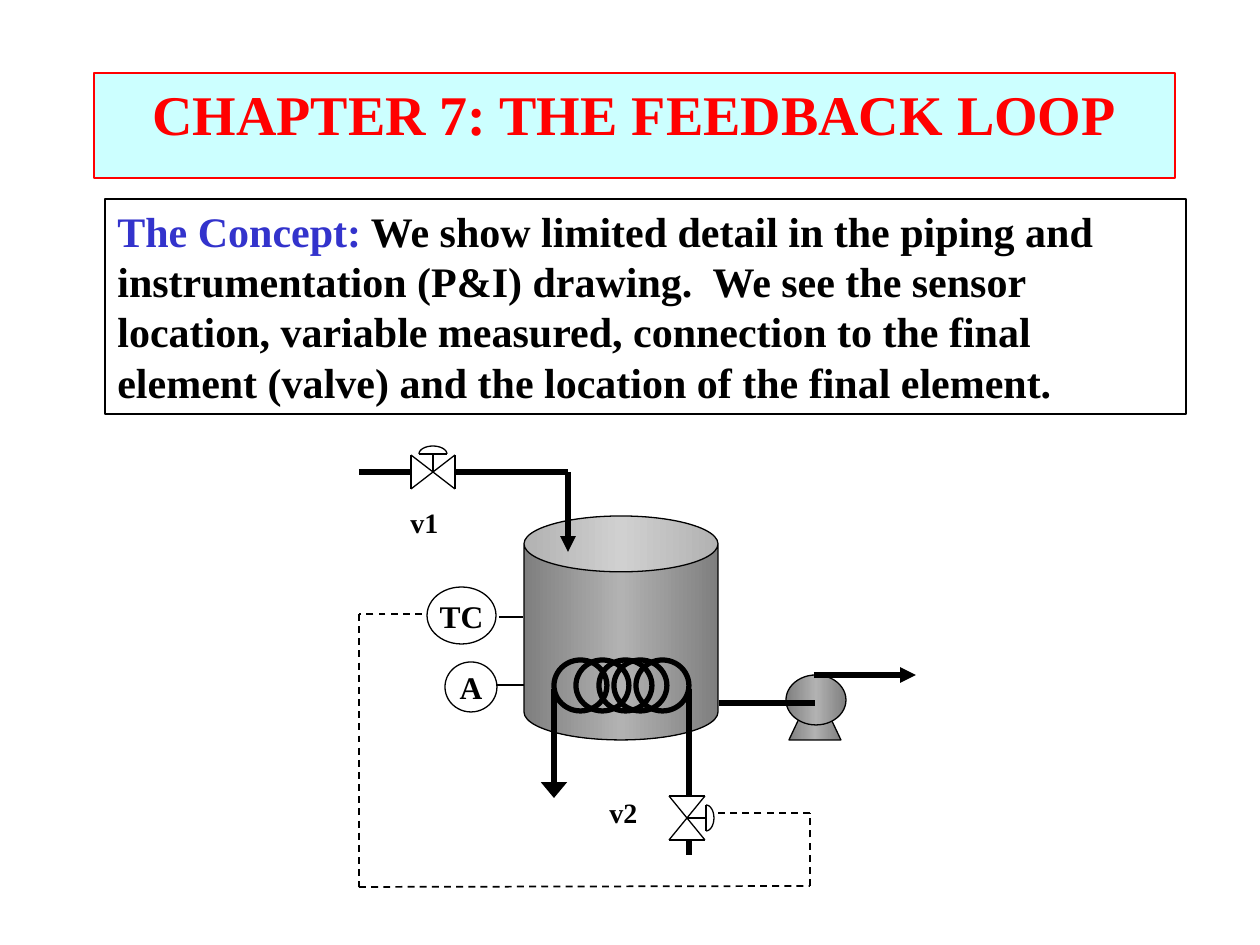
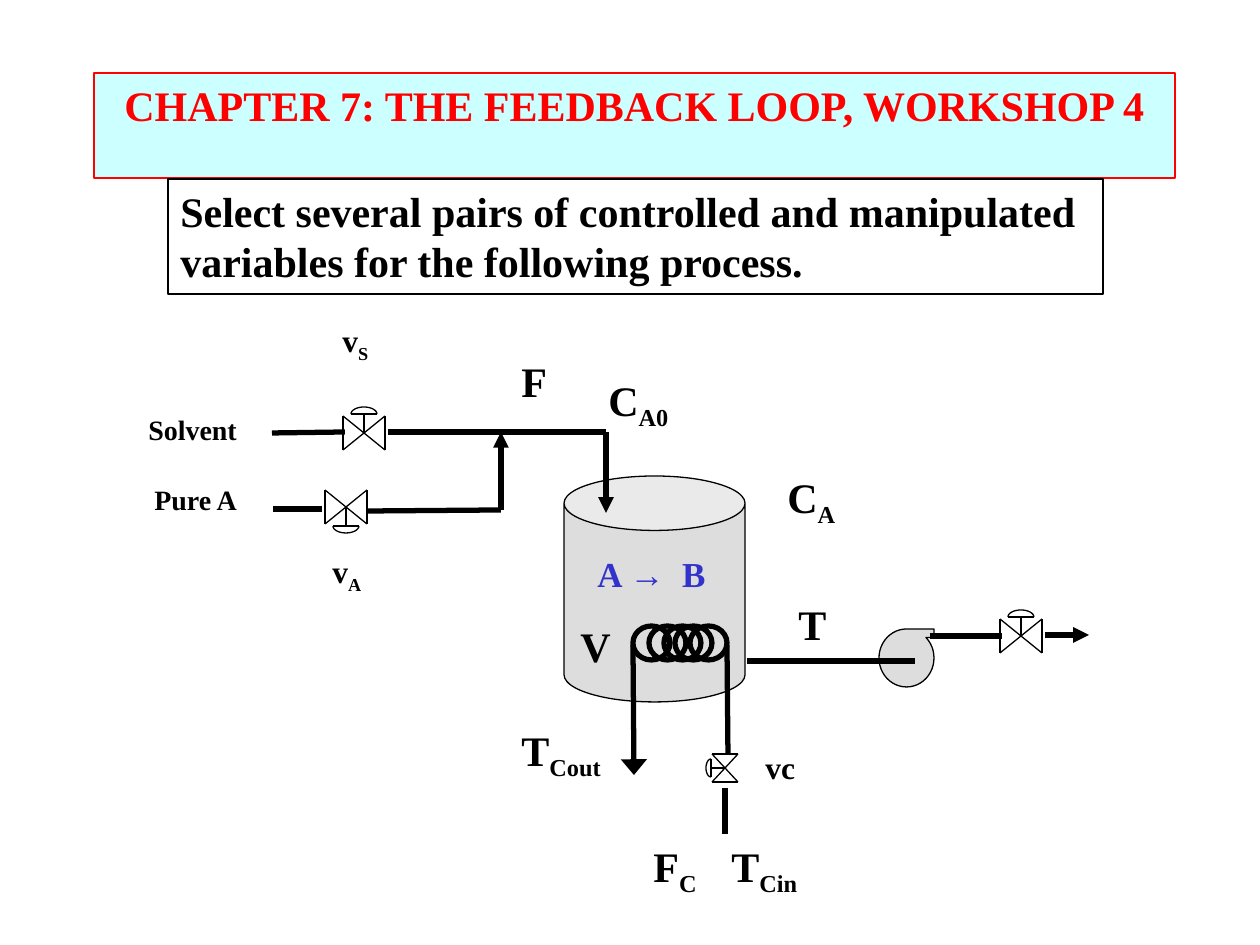
from copy import deepcopy
from dataclasses import dataclass
from itertools import pairwise
from math import cos, pi, sin

from lxml import etree
from pptx import Presentation
from pptx.dml.color import RGBColor
from pptx.enum.dml import MSO_LINE
from pptx.enum.shapes import MSO_CONNECTOR, MSO_SHAPE
from pptx.enum.text import MSO_ANCHOR, MSO_AUTO_SIZE, PP_ALIGN
from pptx.oxml.ns import qn
from pptx.util import Emu, Pt

EMU_PER_PX = 914400 / 126
FONT = "Times New Roman"
TITLE_ONLY = 5
COLOURS = {
    "black": "000000",
    "title": "FF0000",
    "band": "CCFFFF",
    "accent": "3333CC",
    "steel_dark": "7F7F7F",
    "steel_light": "B2B2B2",
    "vessel": "DDDDDD",
}
THIN, SIGNAL, PIPE = 0.75, 1, 3
STRAIGHT = MSO_CONNECTOR.STRAIGHT
DASH = MSO_LINE.DASH
RECT, OVAL, CAN = MSO_SHAPE.RECTANGLE, MSO_SHAPE.OVAL, MSO_SHAPE.CAN
COIL_RING = MSO_SHAPE.FLOWCHART_CONNECTOR
PUMP_BASE = MSO_SHAPE.FLOWCHART_MANUAL_OPERATION
PUMP_CASING = MSO_SHAPE.FLOWCHART_SEQUENTIAL_ACCESS_STORAGE
LEFT, CENTER = PP_ALIGN.LEFT, PP_ALIGN.CENTER
TOP, MIDDLE = MSO_ANCHOR.TOP, MSO_ANCHOR.MIDDLE
FIT_SHAPE = MSO_AUTO_SIZE.SHAPE_TO_FIT_TEXT
UP, DOWN, TO_LEFT, TO_RIGHT = (0, -1), (0, 1), (-1, 0), (1, 0)

Point = tuple[float, float]
Box = tuple[int, int, int, int]


@dataclass
class Pipe:
    points: list[Point]
    arrow: str = ""
    width: float = PIPE
    dashed: bool = False


@dataclass
class Valve:
    x: int
    y: int
    actuator: Point
    run: int = 21
    bore: int = 17
    stem: int = 19
    cap: int = 13
    dome: int = 7


@dataclass
class Coil:
    lefts: list[int]
    top: int
    width: int
    height: int


@dataclass
class Label:
    text: str
    box: Box
    size: int = 24
    colour: str = "black"
    wrap: bool = False


def px(length: float) -> Emu:
    return Emu(round(length * EMU_PER_PX))


def rgb(colour: str) -> RGBColor:
    return RGBColor.from_string(COLOURS[colour])


def set_line(item, width: float = THIN, colour: str = "black") -> None:
    item.line.color.rgb = rgb(colour)
    item.line.width = Pt(width)


def set_fill(shape, colour: str) -> None:
    if not colour:
        shape.fill.background()
    elif colour == "steel":
        shape.fill.gradient()
        shape.fill.gradient_angle = 0
        stop_list = shape._element.spPr.find(qn("a:gradFill")).find(qn("a:gsLst"))
        stop_list.insert(1, deepcopy(stop_list[0]))
        shades = [(0, "steel_dark"), (0.5, "steel_light"), (1, "steel_dark")]
        for stop, (position, shade) in zip(shape.fill.gradient_stops, shades):
            stop.position = position
            stop.color.rgb = rgb(shade)
    else:
        shape.fill.solid()
        shape.fill.fore_color.rgb = rgb(colour)


def draw_shape(slide, kind, box: Box, fill: str = "", width: float = THIN, flip: bool = False):
    shape = slide.shapes.add_shape(kind, *map(px, box))
    shape.shadow.inherit = False
    set_fill(shape, fill)
    set_line(shape, width)
    if flip:
        shape._element.spPr.get_or_add_xfrm().set("flipV", "1")
    return shape


def draw_segment(shapes, start: Point, end: Point, width: float = THIN,
                 dashed: bool = False, arrow: str = "") -> None:
    segment = shapes.add_connector(STRAIGHT, *map(px, (*start, *end)))
    set_line(segment, width)
    if dashed:
        segment.line.dash_style = DASH
    properties = segment._element.spPr
    if arrow:
        etree.SubElement(properties.find(qn("a:ln")), qn("a:tailEnd"),
                         type="triangle", w=arrow, len="med")
    etree.SubElement(properties, qn("a:effectLst"))


def draw_pipe(slide, pipe: Pipe) -> None:
    for start, end in pairwise(pipe.points):
        arrow = pipe.arrow if end == pipe.points[-1] else ""
        draw_segment(slide.shapes, start, end, pipe.width, pipe.dashed, arrow)


def draw_valve(slide, valve: Valve) -> None:
    dx, dy = valve.actuator
    shapes = slide.shapes.add_group_shape().shapes

    def place(along: float, out: float) -> Point:
        return valve.x + along * abs(dy) + out * dx, valve.y + along * abs(dx) + out * dy

    run, bore, stem, cap = valve.run, valve.bore, valve.stem, valve.cap
    corners = [(-run, -bore), (-run, bore), (run, -bore), (run, bore), (-run, -bore)]
    strokes = [*pairwise(corners), ((0, 0), (0, stem)), ((-cap, stem), (cap, stem))]
    for start, end in strokes:
        draw_segment(shapes, place(*start), place(*end))

    angles = [pi * step / 16 for step in range(17)]
    arc = [tuple(map(px, place(cap * cos(a), stem + valve.dome * sin(a)))) for a in angles]
    builder = shapes.build_freeform(*arc[0], scale=1.0)
    builder.add_line_segments(arc[1:], close=False)
    dome = builder.convert_to_shape()
    dome.shadow.inherit = False
    dome.fill.background()
    set_line(dome)


def draw_coil(slide, coil: Coil) -> None:
    for left in coil.lefts:
        draw_shape(slide, COIL_RING, (left, coil.top, coil.width, coil.height), width=PIPE)


def draw_vessel(slide, box: Box, fill: str, rim: float) -> None:
    draw_shape(slide, CAN, box, fill).adjustments[0] = rim


def write(frame, text: str, size: int, colour: str = "black", align=LEFT,
          anchor=TOP, wrap: bool = True):
    frame.word_wrap = wrap
    frame.vertical_anchor = anchor
    paragraph = frame.paragraphs[0]
    paragraph.alignment = align
    paragraph.font.name = FONT
    paragraph.font.size = Pt(size)
    paragraph.font.bold = True
    paragraph.font.color.rgb = rgb(colour)
    base, _, subscript = text.partition("_")
    paragraph.add_run().text = base
    if subscript:
        lowered = paragraph.add_run()
        lowered.text = subscript
        lowered._r.get_or_add_rPr().set("baseline", "-25000")
    return paragraph


def draw_label(slide, label: Label) -> None:
    frame = slide.shapes.add_textbox(*map(px, label.box)).text_frame
    write(frame, label.text, label.size, label.colour, wrap=label.wrap)
    frame.auto_size = FIT_SHAPE


def draw_instrument(slide, text: str, box: Box) -> None:
    bubble = draw_shape(slide, OVAL, box)
    write(bubble.text_frame, text, 18, align=CENTER, anchor=MIDDLE, wrap=False)


def draw_statement(slide, box: Box, text: str, lead: str = "") -> None:
    frame = draw_shape(slide, RECT, box).text_frame
    paragraph = write(frame, lead or text, 24)
    if lead:
        paragraph.runs[0].font.color.rgb = rgb("accent")
        paragraph.add_run().text = text
    frame.auto_size = FIT_SHAPE


def add_titled_slide(deck, text: str, size: int, height: int):
    slide = deck.slides.add_slide(deck.slide_layouts[TITLE_ONLY])
    title = slide.shapes.title
    title.left, title.top, title.width, title.height = map(px, (94, 73, 1081, height))
    set_fill(title, "band")
    set_line(title, colour="title")
    write(title.text_frame, text, size, "title", CENTER)
    title.text_frame.auto_size = FIT_SHAPE
    return slide


def draw_process(slide, coil: Coil, pipes: list[Pipe], valves: list[Valve],
                 labels: list[Label]) -> None:
    draw_coil(slide, coil)
    for pipe in pipes:
        draw_pipe(slide, pipe)
    for valve in valves:
        draw_valve(slide, valve)
    for label in labels:
        draw_label(slide, label)


def build_concept(deck) -> None:
    slide = add_titled_slide(deck, "CHAPTER 7: THE FEEDBACK LOOP", 32, 81)
    draw_vessel(slide, (524, 516, 194, 224), "steel", 0.288)
    draw_shape(slide, PUMP_BASE, (789, 718, 52, 22), "steel", flip=True)
    draw_shape(slide, OVAL, (786, 675, 60, 50), "steel")
    draw_process(
        slide,
        Coil([576, 554, 599, 614, 636], 660, 53, 51),
        [
            Pipe([(359, 472), (412, 472)]),
            Pipe([(456, 472), (568, 472), (568, 552)], "med"),
            Pipe([(554, 689), (554, 798)], "lg"),
            Pipe([(689, 689), (689, 797)]),
            Pipe([(689, 841), (689, 855)]),
            Pipe([(719, 703), (815, 703)]),
            Pipe([(814, 675), (916, 675)], "med"),
            Pipe([(499, 617), (523, 617)], width=THIN),
            Pipe([(496, 685), (524, 685)], width=THIN),
            Pipe([(422, 614), (359, 614), (359, 887), (810, 886), (810, 813), (716, 813)],
                 width=SIGNAL, dashed=True),
        ],
        [
            Valve(433, 472, UP, run=22, stem=18, cap=14, dome=8),
            Valve(687, 818, TO_RIGHT, run=22, bore=18, dome=8),
        ],
        [
            Label("v1", (398, 499, 93, 47), 16, wrap=True),
            Label("v2", (597, 789, 93, 47), 16, wrap=True),
        ],
    )
    draw_instrument(slide, "TC", (427, 587, 69, 57))
    draw_instrument(slide, "A", (445, 662, 52, 50))
    draw_statement(
        slide, (105, 199, 1081, 215),
        " We show limited detail in the piping and instrumentation (P&I) drawing.  "
        "We see the sensor location, variable measured, connection to the final "
        "element (valve) and the location of the final element.",
        lead="The Concept:",
    )


def build_workshop(deck) -> None:
    slide = add_titled_slide(deck, "CHAPTER 7: THE FEEDBACK LOOP, WORKSHOP 4", 24, 64)
    draw_shape(slide, PUMP_CASING, (879, 629, 55, 58), "vessel", flip=True)
    draw_vessel(slide, (564, 476, 181, 226), "vessel", 0.301)
    draw_process(
        slide,
        Coil([649, 633, 664, 675, 690], 626, 37, 34),
        [
            Pipe([(272, 433), (345, 432)]),
            Pipe([(388, 432), (606, 432), (606, 513)], "med"),
            Pipe([(273, 509), (322, 509)]),
            Pipe([(368, 511), (501, 510), (501, 432)], "med"),
            Pipe([(633, 645), (634, 775)], "lg"),
            Pipe([(727, 645), (728, 755)]),
            Pipe([(725, 788), (725, 834)]),
            Pipe([(747, 661), (915, 661)]),
            Pipe([(930, 636), (1002, 636)]),
            Pipe([(1045, 635), (1089, 635)], "med"),
        ],
        [
            Valve(364, 433, UP),
            Valve(346, 507, DOWN),
            Valve(725, 768, TO_LEFT, run=14, bore=13, stem=14, cap=9, dome=5),
            Valve(1021, 636, UP),
        ],
        [
            Label("C_A0", (596, 368, 89, 63)),
            Label("C_A", (775, 465, 76, 63)),
            Label("A →  B", (585, 546, 209, 54), 20, "accent", wrap=True),
            Label("Solvent", (136, 406, 115, 47), 16),
            Label("Pure A", (142, 476, 110, 47), 16),
            Label("vc", (753, 742, 64, 50), 18, wrap=True),
            Label("T", (786, 592, 53, 63)),
            Label("v_A", (320, 546, 78, 50), 18, wrap=True),
            Label("v_S", (330, 315, 78, 50), 18, wrap=True),
            Label("F", (509, 349, 50, 63)),
            Label("V", (568, 614, 55, 63)),
            Label("F_C", (641, 834, 71, 63)),
            Label("T_Cin", (719, 834, 97, 63)),
            Label("T_Cout", (509, 718, 112, 63)),
        ],
    )
    draw_statement(
        slide, (168, 179, 935, 115),
        "Select several pairs of controlled and manipulated variables for the following process.",
    )


def main() -> None:
    deck = Presentation()
    deck.slide_width, deck.slide_height = px(1260), px(945)
    build_concept(deck)
    build_workshop(deck)
    deck.save("out.pptx")


if __name__ == "__main__":
    main()
